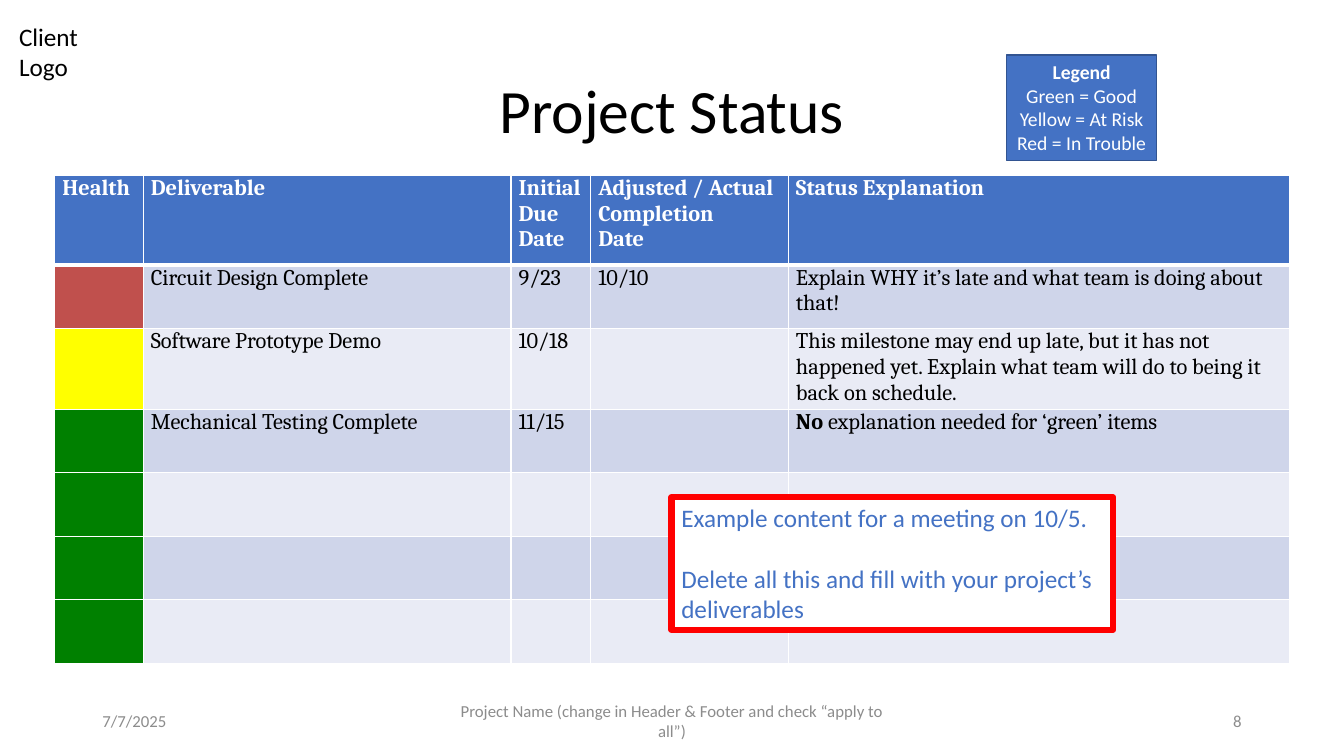
"""Build a project status slide with a deliverables table, a legend and a note."""
from lxml import etree
from pptx import Presentation
from pptx.dml.color import RGBColor
from pptx.enum.shapes import MSO_SHAPE
from pptx.enum.text import MSO_ANCHOR as Anchor, PP_ALIGN as Align
from pptx.oxml.ns import qn
from pptx.util import Cm, Pt

WHITE = RGBColor(0xFF, 0xFF, 0xFF)
BLACK = RGBColor(0x00, 0x00, 0x00)
GRAY = RGBColor(0x8C, 0x8C, 0x8C)
BLUE = RGBColor(0x44, 0x72, 0xC4)
DARK_BLUE = RGBColor(0x32, 0x54, 0x91)
BAND_DARK = RGBColor(0xCF, 0xD5, 0xEA)
BAND_LIGHT = RGBColor(0xE9, 0xEB, 0xF5)
NOTE_RED = RGBColor(0xFF, 0x00, 0x00)
TROUBLE = RGBColor(0xC0, 0x50, 0x4D)
AT_RISK = RGBColor(0xFF, 0xFF, 0x00)
GOOD = RGBColor(0x00, 0x80, 0x00)

COLUMN_WIDTHS = (2.23, 9.27, 2.01, 4.98, 12.62)
HEADER_HEIGHT = 2.26
HEADINGS = ("Health", "Deliverable", "Initial\nDue\nDate",
            "Adjusted / Actual\nCompletion\nDate", "Status Explanation")
DELIVERABLES = (
    (TROUBLE, "Circuit Design Complete", "9/23", "10/10",
     ("Explain WHY it’s late and what team is doing about that!",)),
    (AT_RISK, "Software Prototype Demo", "10/18", "",
     ("This milestone may end up late, but it has not happened yet. "
      "Explain what team will do to being it back on schedule.",)),
    (GOOD, "Mechanical Testing Complete", "11/15", "",
     ("No", " explanation needed for ‘green’ items")),
    *[(GOOD, "", "", "", ("",))] * 3,
)


def format_text(text_frame, size, color, font="Calibri", align=Align.LEFT, bold=False):
    """Format every paragraph and run of a text frame alike."""
    for paragraph in text_frame.paragraphs:
        paragraph.alignment = align
        for run in paragraph.runs:
            run.font.name = font
            run.font.size = Pt(size)
            run.font.bold = bold
            run.font.color.rgb = color


def add_text(slide, box, text, size, color, align=Align.LEFT, anchor=Anchor.MIDDLE):
    """Add a wrapped text box and return its text frame."""
    text_frame = slide.shapes.add_textbox(*map(Cm, box)).text_frame
    text_frame.word_wrap = True
    text_frame.vertical_anchor = anchor
    text_frame.text = text
    format_text(text_frame, size, color, align=align)
    return text_frame


def add_panel(slide, box, text, fill, line, line_width):
    """Add a filled, outlined rectangle with text and return its text frame."""
    shape = slide.shapes.add_shape(MSO_SHAPE.RECTANGLE, *map(Cm, box))
    shape.shadow.inherit = False
    shape.fill.solid()
    shape.fill.fore_color.rgb = fill
    shape.line.color.rgb = line
    shape.line.width = Pt(line_width)
    shape.text_frame.vertical_anchor = Anchor.TOP
    shape.text_frame.text = text
    return shape.text_frame


def style_cell(cell, fill, top_width=1, bottom_width=1):
    """Give a cell white borders, a fill and narrow margins."""
    properties = cell._tc.get_or_add_tcPr()
    for side, width in zip("LRTB", (1, 1, top_width, bottom_width)):
        border = etree.SubElement(properties, qn(f"a:ln{side}"), w=str(Pt(width)))
        solid_fill = etree.SubElement(border, qn("a:solidFill"))
        etree.SubElement(solid_fill, qn("a:srgbClr"), val=str(WHITE))
    cell.fill.solid()
    cell.fill.fore_color.rgb = fill
    cell.margin_left = cell.margin_right = Cm(0.19)
    cell.margin_top = cell.margin_bottom = 0


def add_status_table(slide, box):
    """Add the table of deliverables with a health colour on each row."""
    left, top, width, row_height = box
    height = HEADER_HEIGHT + row_height * len(DELIVERABLES)
    table = slide.shapes.add_table(len(DELIVERABLES) + 1, len(HEADINGS),
                                   *map(Cm, (left, top, width, height))).table
    for column, column_width in zip(table.columns, COLUMN_WIDTHS):
        column.width = Cm(column_width * width / sum(COLUMN_WIDTHS))
    for row in table.rows:
        row.height = Cm(row_height)
    table.rows[0].height = Cm(HEADER_HEIGHT)
    for cell, heading in zip(table.rows[0].cells, HEADINGS):
        style_cell(cell, BLUE, bottom_width=3)
        cell.text_frame.text = heading
        format_text(cell.text_frame, 16, WHITE, "Cambria", bold=True)
    for index, (health, *texts, explanation) in enumerate(DELIVERABLES, start=1):
        band = BAND_DARK if index % 2 else BAND_LIGHT
        cells = list(table.rows[index].cells)
        for cell, fill in zip(cells, (health, band, band, band, band)):
            style_cell(cell, fill, top_width=3 if index == 1 else 1)
        for cell, text in zip(cells[1:4], texts):
            cell.text_frame.text = text
        paragraph = cells[4].text_frame.paragraphs[0]
        for part in filter(None, explanation):
            paragraph.add_run().text = part
        for cell in cells[1:]:
            format_text(cell.text_frame, 16, BLACK, "Cambria")
        if len(explanation) > 1:
            paragraph.runs[0].font.bold = True


def add_heading(slide, box):
    """Add the slide title across the box."""
    title = add_text(slide, box, "Project Status", 44, BLACK, Align.CENTER)
    title.paragraphs[0].line_spacing = 0.9


def add_legend(slide, box):
    """Add the key to the health colours."""
    lines = "Legend\nGreen = Good\nYellow = At Risk\nRed = In Trouble"
    legend = add_panel(slide, box, lines, BLUE, DARK_BLUE, 1)
    legend.word_wrap = False
    format_text(legend, 14, WHITE, align=Align.CENTER)
    legend.paragraphs[0].runs[0].font.bold = True


def add_note(slide, box):
    """Add the red-framed instruction over the table."""
    lines = ("Example content for a meeting on 10/5.\n"
             "Delete all this and fill with your project’s deliverables")
    note = add_panel(slide, box, lines, WHITE, NOTE_RED, 4.5)
    note.word_wrap = True
    format_text(note, 18, BLUE)
    note.paragraphs[1].space_before = Pt(22)


def add_footer(slide, box):
    """Add date, project name and slide number along the box."""
    left, top, width, height = box
    side, middle = 7.62, 11.43
    add_text(slide, (left, top, side, height), "7/7/2025", 12, GRAY)
    add_text(slide, (left + (width - middle) / 2, top, middle, height),
             "Project Name (change in Header & Footer and check “apply to all”)",
             12, GRAY, Align.CENTER)
    add_text(slide, (left + width - side, top, side, height), "8", 12, GRAY, Align.RIGHT)


def main():
    """Build the slide and save the presentation."""
    presentation = Presentation()
    presentation.slide_width, presentation.slide_height = Cm(33.87), Cm(19.05)
    slide = presentation.slides.add_slide(presentation.slide_layouts[6])
    add_text(slide, (0.23, 0.41, 2.82, 1.8), "Client\vLogo", 18, BLACK, anchor=Anchor.TOP)
    add_status_table(slide, (1.38, 4.42, 31.11, 1.6))
    add_heading(slide, (2.33, 1.02, 29.21, 3.68))
    add_footer(slide, (2.33, 17.66, 29.21, 1.01))
    add_legend(slide, (25.37, 1.39, 3.78, 2.65))
    add_note(slide, (16.92, 12.53, 11.13, 3.34))
    presentation.save("out.pptx")


if __name__ == "__main__":
    main()
